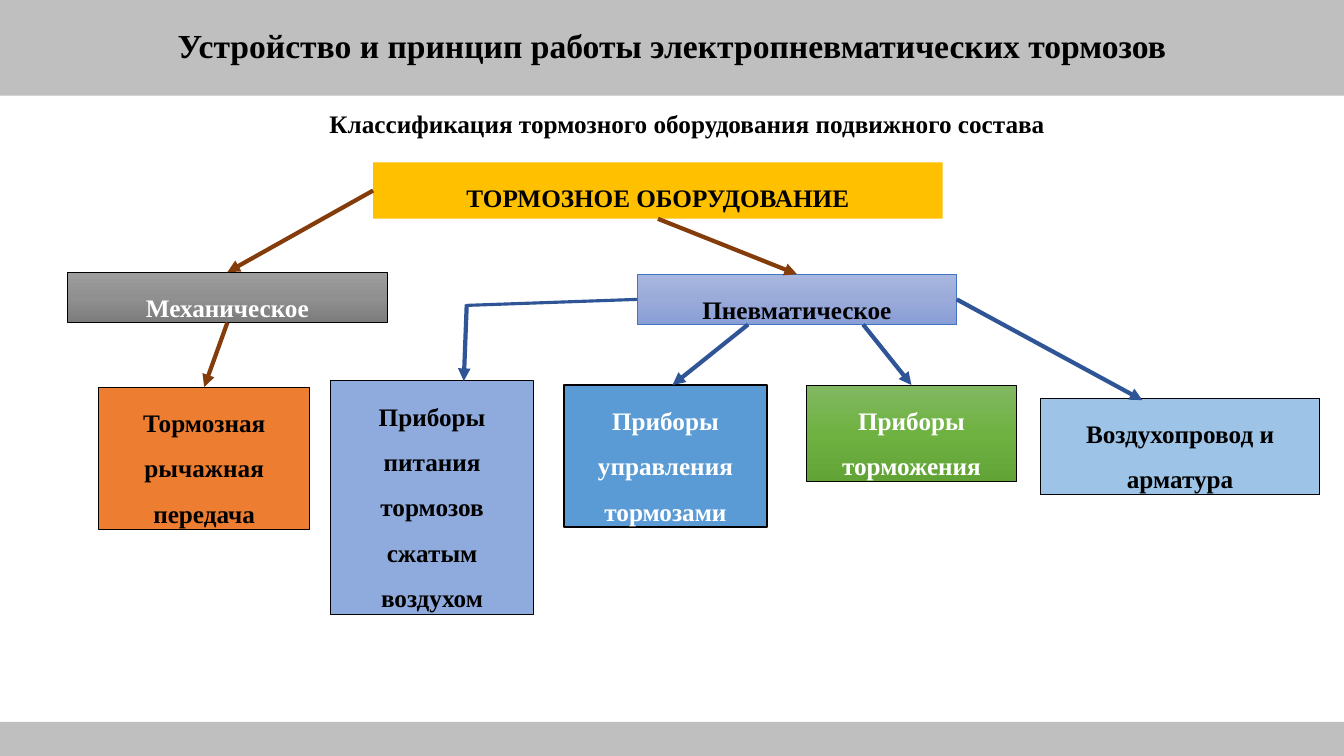
from copy import deepcopy

from pptx import Presentation
from pptx.dml.color import RGBColor
from pptx.enum.shapes import MSO_CONNECTOR as CONN, MSO_SHAPE as SHAPE
from pptx.enum.text import MSO_ANCHOR as ANCHOR, MSO_AUTO_SIZE as FIT, PP_ALIGN as ALIGN
from pptx.oxml.ns import qn
from pptx.util import Inches, Pt
from lxml.etree import SubElement

BLACK = RGBColor(0x00, 0x00, 0x00)
WHITE = RGBColor(0xFF, 0xFF, 0xFF)
BAR_GRAY = RGBColor(0xBF, 0xBF, 0xBF)
GOLD = RGBColor(0xFF, 0xC0, 0x00)
ORANGE = RGBColor(0xED, 0x7D, 0x31)
PERIWINKLE = RGBColor(0x8F, 0xAA, 0xDC)
BLUE = RGBColor(0x5B, 0x9B, 0xD5)
SKY = RGBColor(0x9D, 0xC3, 0xE6)
EDGE_BLUE = RGBColor(0x44, 0x72, 0xC4)
BROWN = RGBColor(0x84, 0x3C, 0x0B)
NAVY = RGBColor(0x2F, 0x55, 0x97)
# Gradients from top to bottom
GRAYS = [RGBColor(0x9D, 0x9D, 0x9D), RGBColor(0x90, 0x90, 0x90), RGBColor(0x7C, 0x7C, 0x7C)]
LILACS = [RGBColor(0xA8, 0xB7, 0xDF), RGBColor(0x9A, 0xAB, 0xD9), RGBColor(0x88, 0x9E, 0xD7)]
GREENS = [RGBColor(0x81, 0xB8, 0x61), RGBColor(0x6F, 0xB2, 0x42), RGBColor(0x62, 0xA3, 0x36)]
TOP, LEFT, BOTTOM, RIGHT = range(4)

prs = Presentation()
prs.slide_width, prs.slide_height = Inches(13.33), Inches(7.5)
s = prs.slides.add_slide(prs.slide_layouts[6])

# Grid of 100 columns by 100 rows
COL, ROW = prs.slide_width / 100, prs.slide_height / 100


def add_rect(x, y, w, h, fill):
    sp = s.shapes.add_shape(SHAPE.RECTANGLE, int(x * COL), int(y * ROW), int(w * COL), int(h * ROW))
    sp.shadow.inherit = False
    sp.line.fill.background()
    if isinstance(fill, list):
        sp.fill.gradient()
        sp.fill.gradient_angle = 270
        stops = sp._element.spPr.find(qn("a:gradFill")).find(qn("a:gsLst"))
        stops.append(deepcopy(stops[0]))
        for i, stop in enumerate(sp.fill.gradient_stops):
            stop.position, stop.color.rgb = i / 2, fill[i]
    else:
        sp.fill.solid()
        sp.fill.fore_color.rgb = fill
    return sp


def write(sp, text, size, color, align, spacing):
    p = sp.text_frame.paragraphs[0]
    p.text, p.alignment, p.line_spacing = text, align, spacing
    p.font.name, p.font.size, p.font.bold = "Times New Roman", Pt(size), True
    p.font.color.rgb = color


# Subtitle
sp = s.shapes.add_textbox(int(23.78 * COL), int(13.73 * ROW), int(55.29 * COL), int(5.33 * ROW))
sp.text_frame.word_wrap = False
sp.text_frame.auto_size = FIT.SHAPE_TO_FIT_TEXT
write(sp, "Классификация тормозного оборудования подвижного состава", 18, BLACK, ALIGN.LEFT, 1.0)

# Boxes: name, text, place on the grid, fill, text colour, outline and its width
boxes = {}
for name, text, place, fill, color, edge, width in [
    ("equipment", "ТОРМОЗНОЕ ОБОРУДОВАНИЕ", (27.76, 21.47, 42.39, 7.47), GOLD, BLACK, None, 0),
    ("mechanical", "Механическое", (5.03, 36, 23.78, 6.67), GRAYS, WHITE, BLACK, 0.5),
    ("pneumatic", "Пневматическое", (47.41, 36.27, 23.78, 6.67), LILACS, BLACK, EDGE_BLUE, 0.5),
    ("supply", "Приборы питания тормозов сжатым воздухом", (24.61, 50.4, 15.08, 30.93),
     PERIWINKLE, BLACK, BLACK, 0.75),
    ("lever", "Тормозная рычажная передача", (7.35, 51.2, 15.68, 18.8), ORANGE, BLACK, BLACK, 0.75),
    ("control", "Приборы управления тормозами", (41.94, 50.93, 15.15, 18.8), BLUE, WHITE, BLACK, 1.5),
    ("braking", "Приборы торможения", (60.02, 50.93, 15.6, 12.8), GREENS, WHITE, BLACK, 0.5),
    ("air line", "Воздухопровод и арматура", (77.42, 52.67, 20.78, 12.8), SKY, BLACK, BLACK, 0.75),
]:
    sp = boxes[name] = add_rect(*place, fill)
    if edge is not None:
        sp.line.color.rgb, sp.line.width = edge, Pt(width)
    tf = sp.text_frame
    tf.word_wrap, tf.vertical_anchor, tf.auto_size = True, ANCHOR.TOP, FIT.SHAPE_TO_FIT_TEXT
    write(sp, text, 18, color, ALIGN.CENTER, 1.5)

# Arrows: each end is a box side or a point on the grid
for start, end, color, width, head in [
    (("mechanical", BOTTOM), ("lever", TOP), BROWN, 3, True),
    ((34.66, 40.4), ("pneumatic", LEFT), NAVY, 2.25, False),
    ((34.73, 40.27), (34.51, 50.4), NAVY, 3, True),
    (("pneumatic", RIGHT), (85, 52.93), NAVY, 3, True),
    ((64.22, 42.93), ("braking", TOP), NAVY, 3, True),
    ((55.66, 42.93), (50.04, 50.93), NAVY, 3, True),
    (("equipment", BOTTOM), ("pneumatic", TOP), BROWN, 3, True),
    (("equipment", LEFT), ("mechanical", TOP), BROWN, 3, True),
]:
    (x1, y1), (x2, y2) = [(0, 0) if e[0] in boxes else e for e in (start, end)]
    c = s.shapes.add_connector(CONN.STRAIGHT, int(x1 * COL), int(y1 * ROW), int(x2 * COL), int(y2 * ROW))
    if start[0] in boxes:
        c.begin_connect(boxes[start[0]], start[1])
    if end[0] in boxes:
        c.end_connect(boxes[end[0]], end[1])
    c.line.color.rgb, c.line.width = color, Pt(width)
    if head:
        SubElement(c.line._get_or_add_ln(), qn("a:tailEnd"), type="triangle")
    SubElement(c._element.spPr, qn("a:effectLst"))

# Title bar and footer bar
title = add_rect(0, 0, 100, 12.67, BAR_GRAY)
title.text_frame.word_wrap = True
title.text_frame.vertical_anchor = ANCHOR.MIDDLE
write(title, "Устройство и принцип работы электропневматических тормозов", 24, BLACK, ALIGN.CENTER, 0.9)
add_rect(0, 95.47, 100, 4.53, BAR_GRAY)

prs.save("out.pptx")
